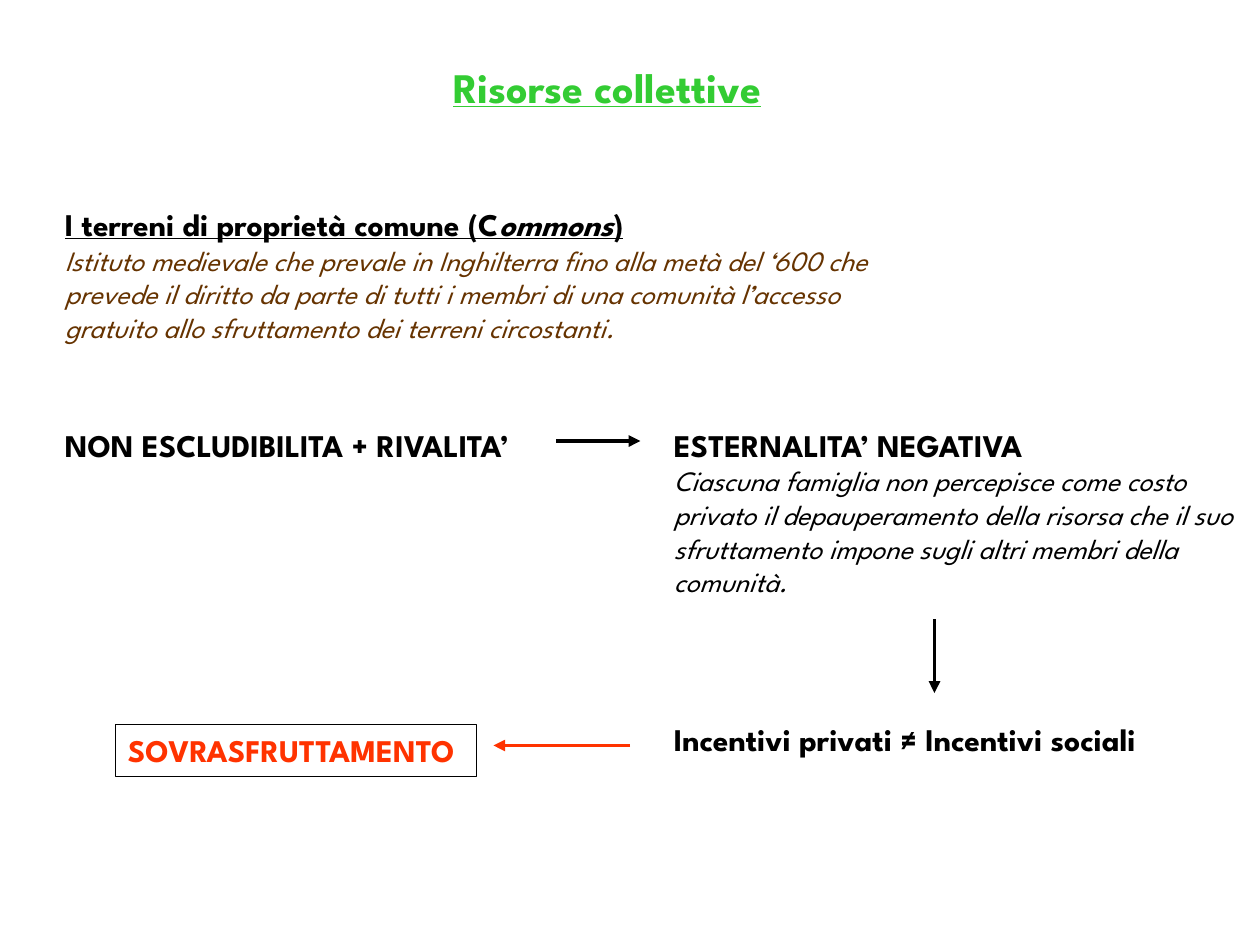
"""Build the slide on common resources and their overexploitation."""
from lxml import etree
from pptx import Presentation
from pptx.dml.color import RGBColor
from pptx.enum.shapes import MSO_CONNECTOR
from pptx.enum.text import MSO_ANCHOR, MSO_AUTO_SIZE, PP_ALIGN
from pptx.oxml.ns import qn
from pptx.util import Pt

FONT = "League Spartan"
COLORS = {"black": "000000", "green": "33CC33", "brown": "663300", "red": "FF3300"}
HEADING = {"size": Pt(18), "bold": True, "italic": False, "underline": False}
FORMATS = {
    "title": HEADING | {"size": Pt(24), "underline": True},
    "heading": HEADING,
    "underlined": HEADING | {"underline": True},
    "underlined italic": HEADING | {"underline": True, "italic": True},
    "note": HEADING | {"size": Pt(16), "bold": False, "italic": True},
}


def fill_text(shape, box, paragraphs):
    shape.left, shape.top, shape.width, shape.height = map(Pt, box)
    frame = shape.text_frame
    frame.word_wrap = True
    frame.auto_size = MSO_AUTO_SIZE.NONE
    frame.vertical_anchor = MSO_ANCHOR.TOP
    for index, runs in enumerate(paragraphs):
        paragraph = frame.add_paragraph() if index else frame.paragraphs[0]
        paragraph.alignment = PP_ALIGN.LEFT
        for text, style, color in runs:
            run = paragraph.add_run()
            run.text = text
            run.font.name = FONT
            run.font.color.rgb = RGBColor.from_string(COLORS[color])
            for name, value in FORMATS[style].items():
                setattr(run.font, name, value)


def add_arrow(shapes, start, end, color):
    arrow = shapes.add_connector(MSO_CONNECTOR.STRAIGHT, *map(Pt, start + end))
    arrow.line.width = Pt(2.25)
    arrow.line.color.rgb = RGBColor.from_string(COLORS[color])
    properties = arrow._element.spPr
    etree.SubElement(properties.find(qn("a:ln")), qn("a:tailEnd"), type="triangle")
    etree.SubElement(properties, qn("a:effectLst"))


presentation = Presentation()
presentation.slide_width, presentation.slide_height = Pt(720), Pt(540)
slide = presentation.slides.add_slide(presentation.slide_layouts[5])
shapes = slide.shapes

fill_text(shapes.title, (251.75, 31.75, 207.25, 36), [[("Risorse collettive", "title", "green")]])

text_boxes = [
    ((30, 113.75, 505, 106), [
        [("I terreni di proprietà comune (C", "underlined", "black"),
         ("ommons", "underlined italic", "black"),
         (")", "underlined", "black")],
        [("Istituto medievale che prevale in Inghilterra fino alla metà del ‘600 che "
          "prevede il diritto da parte di tutti i membri di una comunità l’accesso "
          "gratuito allo sfruttamento dei terreni circostanti.", "note", "brown")],
    ]),
    ((30, 240, 281.5, 29), [
        [("NON ESCLUDIBILITA + RIVALITA’", "heading", "black")],
    ]),
    ((378, 240, 341.5, 127.5), [
        [("ESTERNALITA’ NEGATIVA", "heading", "black")],
        [("Ciascuna famiglia non percepisce come costo privato il depauperamento "
          "della risorsa che il suo sfruttamento impone sugli altri membri della "
          "comunità.", "note", "black")],
    ]),
    ((378, 408, 302, 29), [
        [("Incentivi privati ≠ Incentivi sociali", "heading", "black")],
    ]),
    ((66, 414, 206.25, 29.75), [
        [("SOVRASFRUTTAMENTO", "heading", "red")],
    ]),
]
for box, paragraphs in text_boxes:
    text_box = shapes.add_textbox(*map(Pt, box))
    fill_text(text_box, box, paragraphs)

text_box.line.color.rgb = RGBColor.from_string(COLORS["black"])
text_box.line.width = Pt(0.75)

for start, end, color in [
    ((318, 252), (366, 252), "black"),
    ((534, 354), (534, 396), "black"),
    ((360, 426), (282, 426), "red"),
]:
    add_arrow(shapes, start, end, color)

presentation.save("out.pptx")
